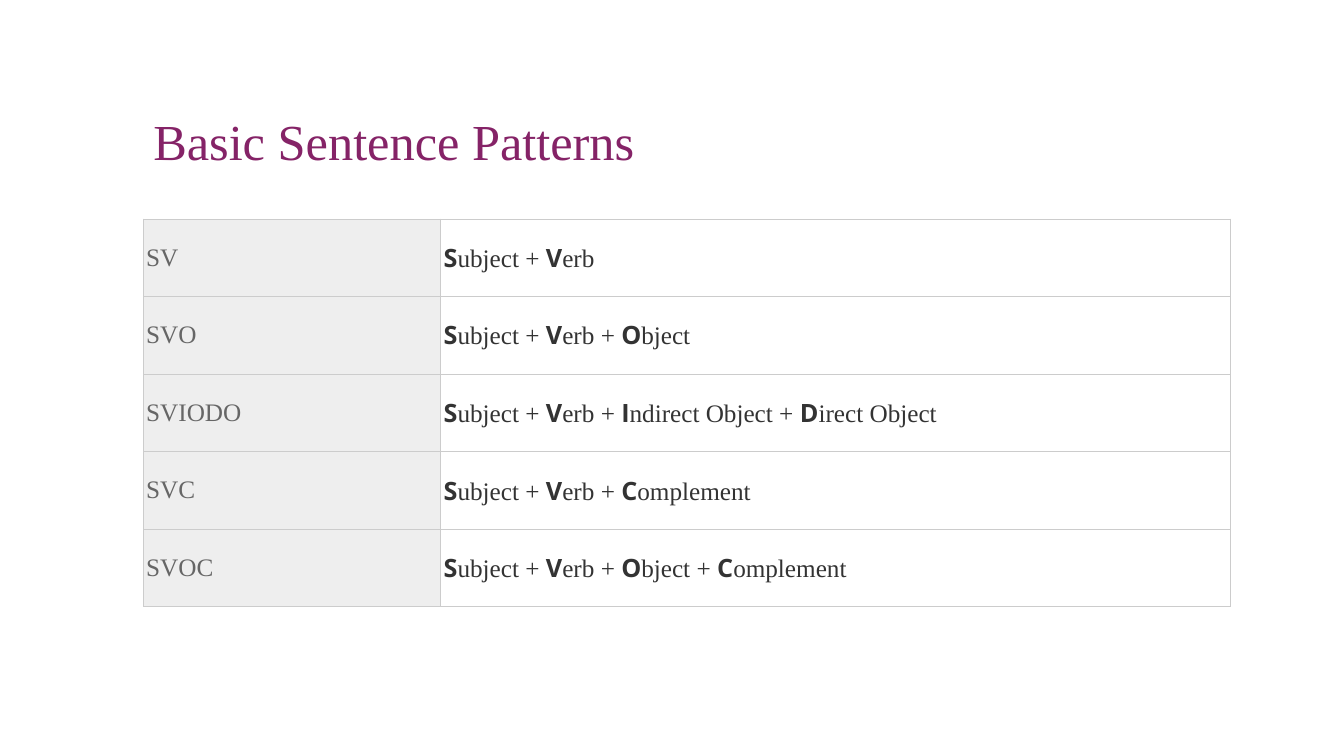
from lxml import etree
from pptx import Presentation
from pptx.dml.color import RGBColor
from pptx.enum import text
from pptx.oxml import ns
from pptx.util import Inches, Pt

PURPLE = RGBColor(0x85, 0x23, 0x67)
GRAY = RGBColor(0x66, 0x66, 0x66)
DARK = RGBColor(0x33, 0x33, 0x33)
LABEL_FILL = RGBColor(0xEE, 0xEE, 0xEE)
WHITE = RGBColor(0xFF, 0xFF, 0xFF)
BORDER = RGBColor(0xCC, 0xCC, 0xCC)

PATTERNS = [
    ("SV", ["Subject", "Verb"]),
    ("SVO", ["Subject", "Verb", "Object"]),
    ("SVIODO", ["Subject", "Verb", "Indirect Object", "Direct Object"]),
    ("SVC", ["Subject", "Verb", "Complement"]),
    ("SVOC", ["Subject", "Verb", "Object", "Complement"]),
]


class SlideBuilder:
    body_font = "Times New Roman"
    initial_font = "Open Sans"
    body_size = 18
    title_size = 36

    def __init__(self, presentation):
        self.slide = presentation.slides.add_slide(presentation.slide_layouts[5])

    def add_run(self, paragraph, words, color, size, font=body_font, bold=False):
        run = paragraph.add_run()
        run.text = words
        run.font.name = font
        run.font.size = Pt(size)
        run.font.bold = bold
        run.font.color.rgb = color

    def add_title(self, words, left, top, width, height):
        title = self.slide.shapes.title
        title.left, title.top = Inches(left), Inches(top)
        title.width, title.height = Inches(width), Inches(height)
        title.text_frame.vertical_anchor = text.MSO_ANCHOR.BOTTOM
        title.text_frame.word_wrap = True
        paragraph = title.text_frame.paragraphs[0]
        paragraph.alignment = text.PP_ALIGN.LEFT
        paragraph.line_spacing = 0.9
        self.add_run(paragraph, words, PURPLE, self.title_size)

    def format_cell(self, cell, fill):
        properties = cell._tc.get_or_add_tcPr()
        for side in ("lnL", "lnR", "lnT", "lnB"):
            line = etree.SubElement(properties, ns.qn(f"a:{side}"), w=str(Pt(0.3)))
            solid = etree.SubElement(line, ns.qn("a:solidFill"))
            etree.SubElement(solid, ns.qn("a:srgbClr"), val=str(BORDER))
        cell.fill.solid()
        cell.fill.fore_color.rgb = fill
        cell.vertical_anchor = text.MSO_ANCHOR.MIDDLE
        cell.margin_left = cell.margin_right = Inches(0.03)
        cell.margin_top = cell.margin_bottom = Inches(0.03)
        return cell.text_frame.paragraphs[0]

    def add_pattern_table(self, patterns, left, top, column_widths, row_height):
        table = self.slide.shapes.add_table(
            len(patterns), len(column_widths), Inches(left), Inches(top),
            Inches(sum(column_widths)), Inches(row_height * len(patterns)),
        ).table
        table.first_row = table.horz_banding = False
        for column, width in zip(table.columns, column_widths):
            column.width = Inches(width)
        for row, (label, parts) in zip(table.rows, patterns):
            row.height = Inches(row_height)
            label_cell, parts_cell = row.cells
            paragraph = self.format_cell(label_cell, LABEL_FILL)
            self.add_run(paragraph, label, GRAY, self.body_size)
            paragraph = self.format_cell(parts_cell, WHITE)
            for index, part in enumerate(parts, 1):
                joiner = " + " if index < len(parts) else ""
                self.add_run(paragraph, part[0], DARK, self.body_size, self.initial_font, True)
                self.add_run(paragraph, part[1:] + joiner, DARK, self.body_size)


def main():
    presentation = Presentation()
    presentation.slide_width = Inches(13.33)
    presentation.slide_height = Inches(7.5)
    builder = SlideBuilder(presentation)
    builder.add_title("Basic Sentence Patterns", 1.42, 0.4, 10.5, 1.35)
    builder.add_pattern_table(PATTERNS, 1.42, 2.17, [2.95, 7.83], 0.77)
    presentation.save("out.pptx")


if __name__ == "__main__":
    main()
